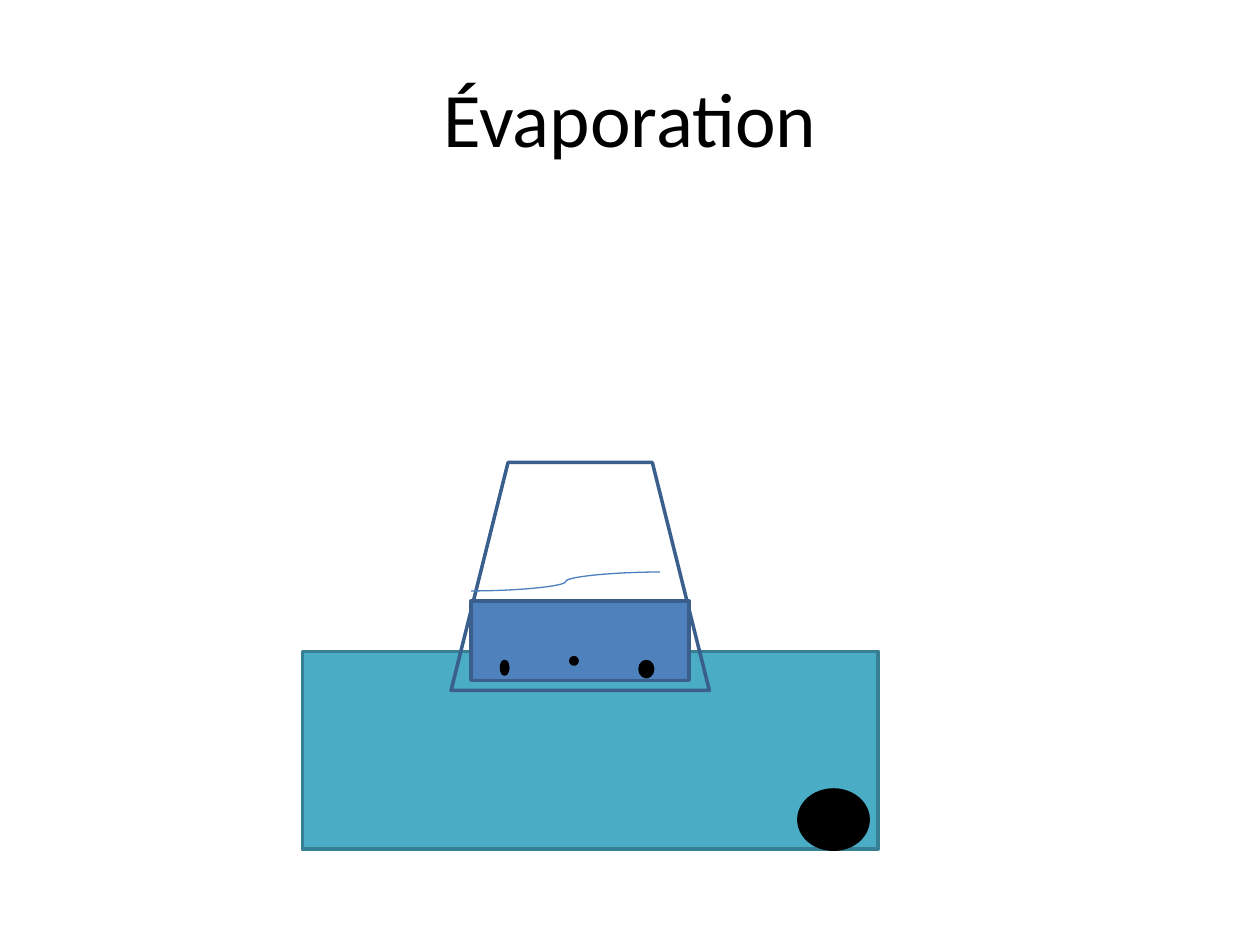
from dataclasses import dataclass
from typing import Optional

from lxml import etree
from pptx import Presentation
from pptx import util as u
from pptx.dml.color import RGBColor
from pptx.enum import shapes, text
from pptx.oxml import ns
from pptx.slide import Slide

KIND = shapes.MSO_SHAPE


@dataclass(frozen=True)
class Theme:
    font: str = "Calibri"
    title_size: float = 44
    outline: float = 2
    thin_line: float = 0.75
    black: str = "000000"
    basin: str = "4BACC6"
    basin_edge: str = "377F92"
    water: str = "4F81BD"
    glass_edge: str = "3A5F8C"
    surface: str = "4B7EBC"


THEME = Theme()


@dataclass(frozen=True)
class Part:
    kind: KIND
    left: float
    top: float
    width: float
    height: float
    fill: Optional[str]
    edge: str


def particle(left: float, top: float, width: float, height: float,
             kind: KIND = KIND.FLOWCHART_CONNECTOR) -> Part:
    return Part(kind, left, top, width, height, THEME.black, THEME.black)


BASIN = Part(KIND.RECTANGLE, 2.4, 5.17, 4.57, 1.57, THEME.basin, THEME.basin_edge)
GLASS = Part(KIND.TRAPEZOID, 3.58, 3.67, 2.05, 1.81, None, THEME.glass_edge)
STONE = particle(6.34, 6.27, 0.55, 0.47, KIND.OVAL)
WATER = Part(KIND.RECTANGLE, 3.74, 4.77, 1.73, 0.63, THEME.water, THEME.glass_edge)
GRAINS = (
    particle(3.98, 5.25, 0.05, 0.1),
    particle(4.53, 5.22, 0.05, 0.05),
    particle(5.08, 5.25, 0.1, 0.12),
)


def draw_part(slide: Slide, part: Part) -> None:
    shape = slide.shapes.add_shape(
        part.kind, u.Inches(part.left), u.Inches(part.top),
        u.Inches(part.width), u.Inches(part.height))
    shape.shadow.inherit = False
    if part.fill is None:
        shape.fill.background()
    else:
        shape.fill.solid()
        shape.fill.fore_color.rgb = RGBColor.from_string(part.fill)
    shape.line.color.rgb = RGBColor.from_string(part.edge)
    shape.line.width = u.Pt(THEME.outline)


def draw_surface(slide: Slide) -> None:
    """Draw the curved line that rises above the water."""
    surface = slide.shapes.add_connector(
        shapes.MSO_CONNECTOR.CURVE,
        u.Inches(3.74), u.Inches(4.69), u.Inches(5.24), u.Inches(4.54))
    surface.line.color.rgb = RGBColor.from_string(THEME.surface)
    surface.line.width = u.Pt(THEME.thin_line)
    etree.SubElement(surface._element.spPr, ns.qn("a:effectLst"))


def write_title(slide: Slide, wording: str) -> None:
    title = slide.shapes.title
    title.left, title.top = u.Inches(0.5), u.Inches(0.3)
    title.width, title.height = u.Inches(9), u.Inches(1.25)
    title.text_frame.vertical_anchor = text.MSO_ANCHOR.MIDDLE
    paragraph = title.text_frame.paragraphs[0]
    paragraph.alignment = text.PP_ALIGN.CENTER
    run = paragraph.add_run()
    run.text = wording
    run.font.name = THEME.font
    run.font.size = u.Pt(THEME.title_size)
    run.font.color.rgb = RGBColor.from_string(THEME.black)


def main() -> None:
    deck = Presentation()
    deck.slide_width, deck.slide_height = u.Inches(10), u.Inches(7.5)
    slide = deck.slides.add_slide(deck.slide_layouts.get_by_name("Title Only"))
    write_title(slide, "Évaporation")
    for part in (BASIN, GLASS, STONE):
        draw_part(slide, part)
    draw_surface(slide)
    for part in (WATER, *GRAINS):
        draw_part(slide, part)
    deck.save("out.pptx")


if __name__ == "__main__":
    main()
